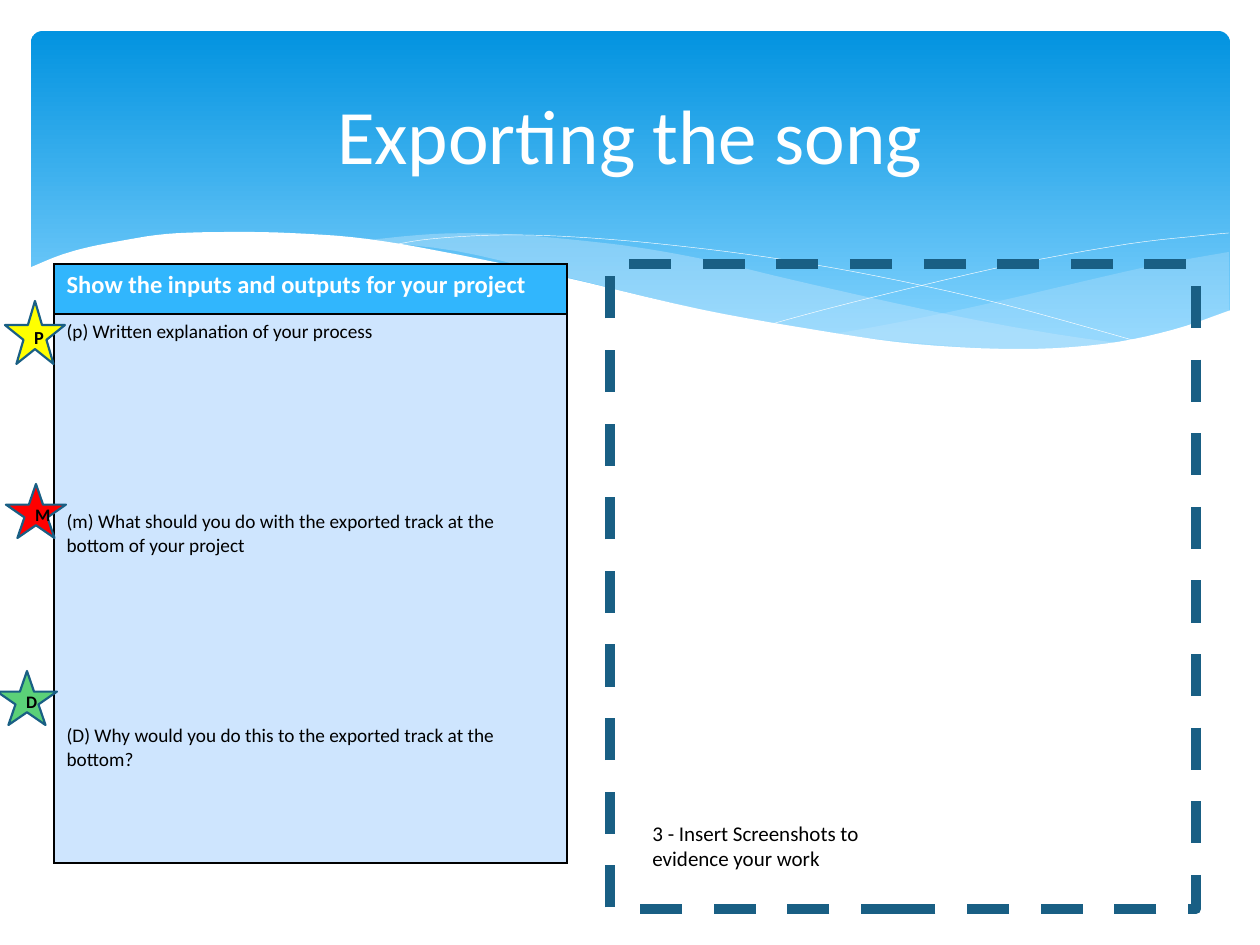
"""Build the worksheet slide about exporting the song."""
from lxml import etree
from pptx import Presentation
from pptx.dml.color import RGBColor
from pptx.enum.dml import MSO_LINE
from pptx.enum.shapes import MSO_SHAPE
from pptx.enum.text import MSO_ANCHOR, PP_ALIGN
from pptx.oxml.ns import qn
from pptx.util import Pt

PX = 914400 / 126
FINE = 10
CURVE_STEPS = 5
FONT = "Calibri"
CENTER, LEFT = PP_ALIGN.CENTER, PP_ALIGN.LEFT
MIDDLE, TOP = MSO_ANCHOR.MIDDLE, MSO_ANCHOR.TOP
RECT, ROUND, STAR = MSO_SHAPE.RECTANGLE, MSO_SHAPE.ROUNDED_RECTANGLE, MSO_SHAPE.STAR_5_POINT
DASH = MSO_LINE.DASH

COLORS = {
    "white": "FFFFFF", "black": "000000", "sky": "0293E0", "haze": "83D3FE",
    "mist": "C6E7FC", "edge": "195F84", "header": "31B6FD", "body": "CEE5FE",
    "yellow": "FFFF00", "red": "FF0000", "green": "5BD078",
}

TITLE = "Exporting the song"
HEADING = "Show the inputs and outputs for your project"
QUESTIONS = [
    "(p) Written explanation of your process",
    "(m) What should you do with the exported track at the bottom of your project",
    "(D) Why would you do this to the exported track at the bottom?",
]
EVIDENCE = "3 - Insert Screenshots to evidence your work"
GRADES = [
    ("M", "red", (6, 484, 60, 54), 10),
    ("P", "yellow", (5, 301, 60, 63), 10.5),
    ("D", "green", (-3, 671, 60, 54), 10),
]
TABLE_BOX = (54, 264, 513, 599)
TABLE_ROWS = (50, 549)

RIGHT_WAVE = [
    [(1229, 252), (1156, 265), (1085, 281), (982, 305), (890, 324), (833, 334)],
    [(833, 334), (906, 342), (998, 349), (1076, 349), (1130, 342), (1178, 331), (1229, 311)],
]
MIDDLE_WAVE = [
    [(1125, 344), (1055, 334), (976, 320), (890, 302), (793, 280), (717, 262),
     (648, 249), (586, 241), (503, 234), (433, 234), (360, 241)],
    [(360, 241), (456, 251), (566, 277), (668, 302), (757, 322), (857, 339),
     (943, 347), (1017, 350), (1068, 349), (1125, 344)],
]
FALLING_LINE = [
    [(389, 246), (422, 240), (471, 236), (524, 235), (591, 238), (670, 245),
     (766, 257), (876, 276), (1002, 304), (1143, 343)],
]
RISING_LINE = [
    [(772, 324), (823, 310), (907, 289), (1016, 264), (1128, 244), (1198, 236), (1229, 233)],
]
WHITE_WAVE = [
    [(1231, 310), (1172, 330), (1103, 344), (1019, 349), (915, 344), (816, 330),
     (699, 309), (563, 277), (460, 255), (368, 239), (290, 233), (223, 232),
     (166, 234), (120, 241), (85, 248), (58, 256), (29, 268)],
    [(29, 415), (1231, 415)],
]


def px(value):
    return round(value * PX)


def color(name):
    return RGBColor.from_string(COLORS[name])


def paint(shape, fill=None, line=None, width=1.0, alpha=None):
    shape.shadow.inherit = False
    if fill:
        shape.fill.solid()
        shape.fill.fore_color.rgb = color(fill)
    else:
        shape.fill.background()
    if alpha:
        tint = shape._element.spPr.find(qn("a:solidFill"))[0]
        etree.SubElement(tint, qn("a:alpha"), val=str(alpha * 1000))
    if line:
        shape.line.color.rgb = color(line)
        shape.line.width = Pt(width)
    else:
        shape.line.fill.background()


def write(frame, texts, size, ink="black", bold=False, align=LEFT, anchor=TOP, gap=0):
    frame.word_wrap = True
    frame.vertical_anchor = anchor
    for index, text in enumerate(texts):
        para = frame.add_paragraph() if index else frame.paragraphs[0]
        para.alignment = align
        if index:
            para.space_before = Pt(gap)
        span = para.add_run()
        span.text = text
        span.font.name, span.font.size, span.font.bold = FONT, Pt(size), bold
        span.font.color.rgb = color(ink)


def add_shape(page, kind, box):
    return page.shapes.add_shape(kind, *map(px, box))


def add_text(page, box, text, size, **style):
    write(page.shapes.add_textbox(*map(px, box)).text_frame, [text], size, **style)


def smooth(knots):
    if len(knots) < 3:
        return knots
    padded = [knots[0], *knots, knots[-1]]
    points = []
    for a, b, c, d in zip(padded, padded[1:], padded[2:], padded[3:]):
        for step in range(CURVE_STEPS):
            t = step / CURVE_STEPS
            points.append(tuple(
                q + t * (r - p + t * (2 * p - 5 * q + 4 * r - s + t * (3 * q - p - 3 * r + s))) / 2
                for p, q, r, s in zip(a, b, c, d)))
    return points + [knots[-1]]


def add_curve(page, edges, closed=True, **style):
    points = [(x * FINE, y * FINE) for edge in edges for x, y in smooth(edge)]
    builder = page.shapes.build_freeform(*points[0], scale=PX / FINE)
    builder.add_line_segments(points[1:], close=closed)
    paint(builder.convert_to_shape(), **style)


def add_banner(page):
    banner = add_shape(page, ROUND, (31, 31, 1199, 340))
    banner.adjustments[0] = 0.034
    paint(banner)
    banner.fill.gradient()
    banner.fill.gradient_angle = 270
    for stop, name, position in zip(banner.fill.gradient_stops, ("sky", "haze"), (0, 0.9)):
        stop.color.rgb = color(name)
        stop.position = position
    add_curve(page, RIGHT_WAVE, fill="mist", alpha=29)
    add_curve(page, MIDDLE_WAVE, fill="mist", alpha=40)
    for edges in (FALLING_LINE, RISING_LINE):
        add_curve(page, edges, closed=False, line="white", width=0.25)
    add_curve(page, WHITE_WAVE, fill="white")


def style_cell(cell, fill):
    props = cell._tc.get_or_add_tcPr()
    for side in ("lnL", "lnR", "lnT", "lnB"):
        border = etree.SubElement(props, qn(f"a:{side}"), w=str(Pt(1)))
        solid = etree.SubElement(border, qn("a:solidFill"))
        etree.SubElement(solid, qn("a:srgbClr"), val=COLORS["black"])
    cell.fill.solid()
    cell.fill.fore_color.rgb = color(fill)


def add_questions(page):
    table = page.shapes.add_table(2, 1, *map(px, TABLE_BOX)).table
    for row, height in zip(table.rows, TABLE_ROWS):
        row.height = px(height)
    heading, body = table.cell(0, 0), table.cell(1, 0)
    style_cell(heading, "header")
    style_cell(body, "body")
    write(heading.text_frame, [HEADING], 14, ink="white", bold=True)
    write(body.text_frame, QUESTIONS, 11, gap=95)


def main():
    deck = Presentation()
    deck.slide_width, deck.slide_height = px(1260), px(945)
    page = deck.slides.add_slide(deck.slide_layouts[6])
    add_banner(page)
    add_text(page, (63, 47, 1134, 173), TITLE, 44, ink="white", align=CENTER, anchor=MIDDLE)
    frame = add_shape(page, RECT, (610, 264, 586, 645))
    paint(frame, line="edge", width=6)
    frame.line.dash_style = DASH
    add_text(page, (640, 814, 297, 63), EVIDENCE, 12)
    add_questions(page)
    for letter, fill, box, size in GRADES:
        star = add_shape(page, STAR, box)
        paint(star, fill=fill, line="edge", width=1.25)
        write(star.text_frame, [letter], size, bold=True, align=CENTER, anchor=MIDDLE)
    deck.save("out.pptx")


if __name__ == "__main__":
    main()
